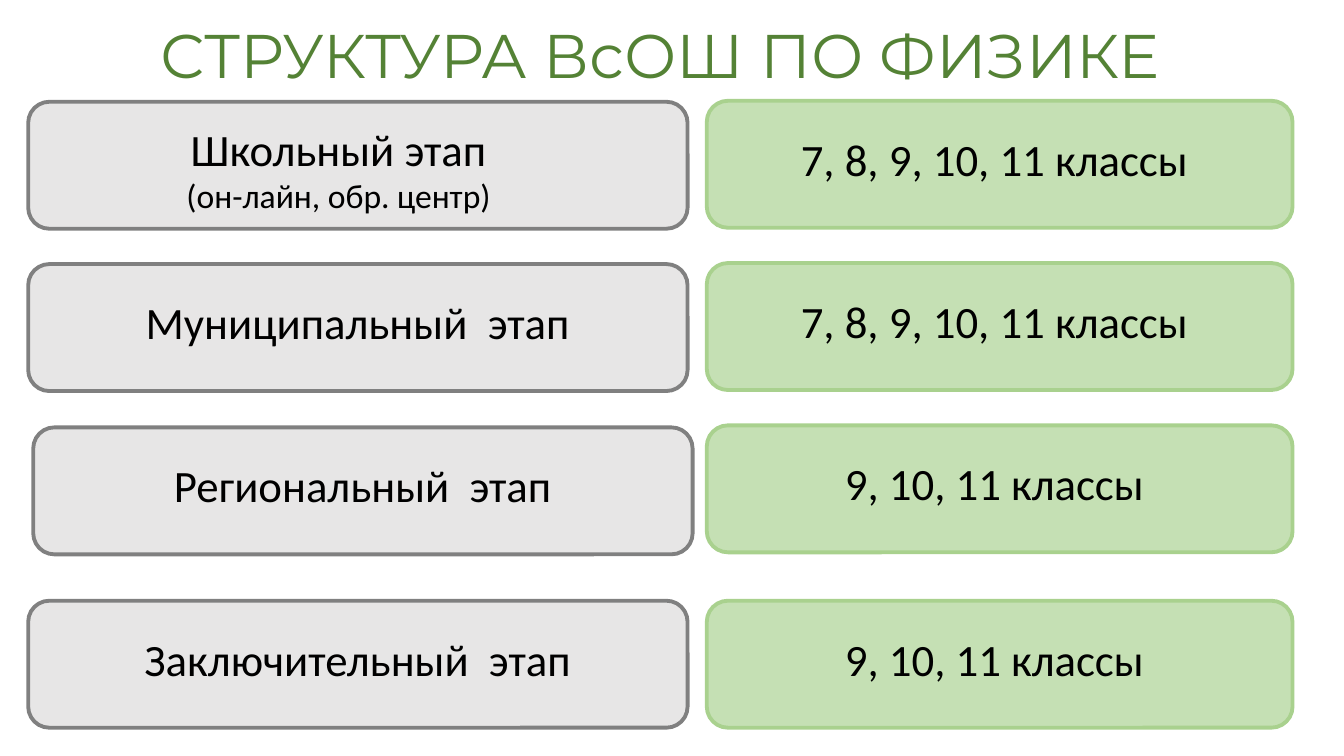
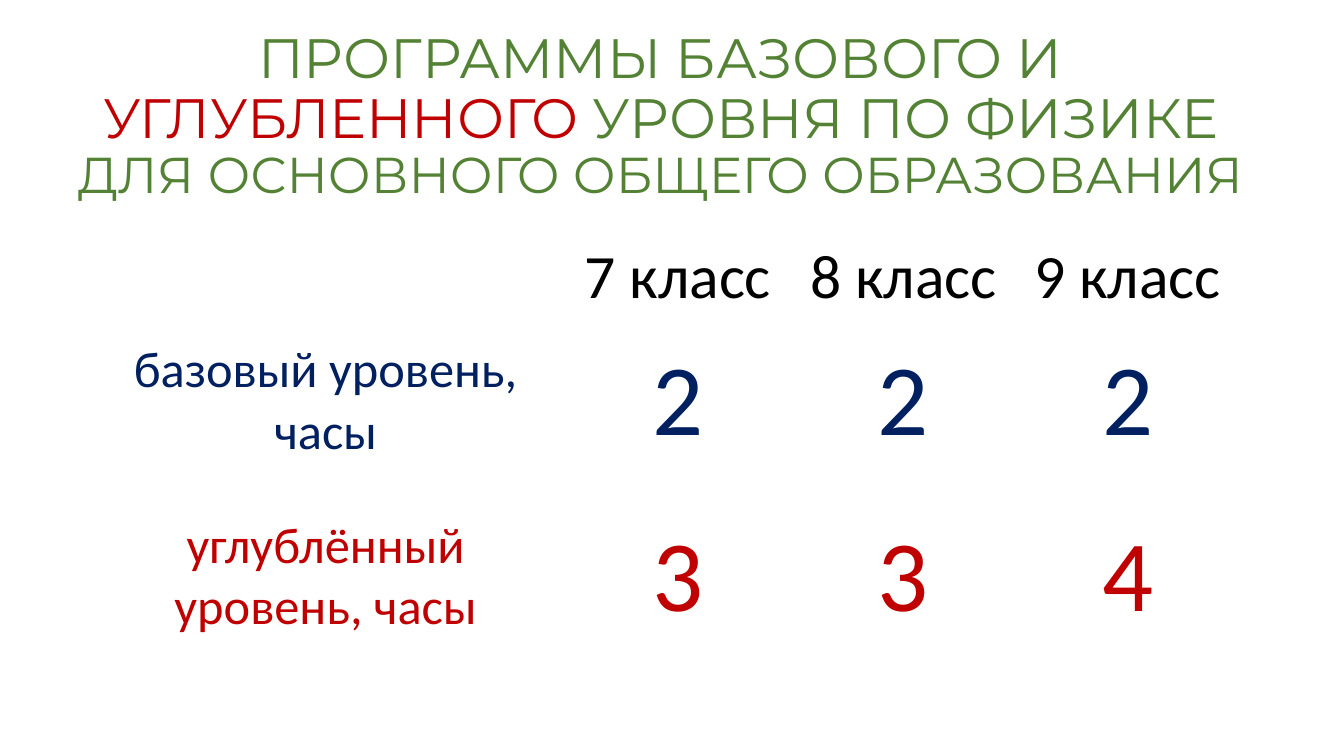
from pptx import Presentation
from pptx.dml.color import RGBColor
from pptx.enum.shapes import MSO_SHAPE
from pptx.enum.text import MSO_ANCHOR, PP_ALIGN
from pptx.util import Inches, Pt

ROUNDED = MSO_SHAPE.ROUNDED_RECTANGLE
MIDDLE = MSO_ANCHOR.MIDDLE
CENTER = PP_ALIGN.CENTER

GREEN = RGBColor(0x54, 0x82, 0x35)
RED = RGBColor(0xC0, 0x00, 0x00)
NAVY = RGBColor(0x00, 0x20, 0x60)
BLACK = RGBColor(0x00, 0x00, 0x00)
STAGE_STYLE = (RGBColor(0xE7, 0xE6, 0xE6), RGBColor(0x80, 0x80, 0x80))
GRADES_STYLE = (RGBColor(0xC5, 0xE0, 0xB4), RGBColor(0xA9, 0xD1, 0x8E))

TITLE_FONT, BODY_FONT = "Montserrat", "Calibri"

# Titles: lines of (text, size, colour) runs
STRUCTURE_TITLE = [[("СТРУКТУРА ВсОШ ПО ФИЗИКЕ", 44, GREEN)]]
PROGRAM_TITLE = [
    [("ПРОГРАММЫ БАЗОВОГО И", 39.6, GREEN)],
    [("УГЛУБЛЕННОГО", 39.6, RED), (" УРОВНЯ ПО ФИЗИКЕ", 39.6, GREEN)],
    [("ДЛЯ ОСНОВНОГО ОБЩЕГО ОБРАЗОВАНИЯ", 36, GREEN)],
]

# Stages: lines of (text, size), left, top, insets; then grades and their top
BOX_HEIGHT = 1.26
STAGE_WIDTH = 6.54
GRADES_LEFT, GRADES_WIDTH = 7.01, 5.81
STAGE_INSETS = (0.1, 0.05, 0.1, 0.17)
TWO_LINE_INSETS = (0.1, 0.11, 0.48, 0.05)
GRADES_INSETS = (0.1, 0.05, 0.2, 0.17)
STAGES = [
    ([("Школьный этап", 32), ("(он-лайн, обр. центр)", 24)],
     0.28, 1.01, TWO_LINE_INSETS, "7, 8, 9, 10, 11 классы", 1.0),
    ([("Муниципальный  этап", 32)],
     0.28, 2.62, STAGE_INSETS, "7, 8, 9, 10, 11 классы", 2.61),
    ([("Региональный  этап", 32)],
     0.33, 4.24, STAGE_INSETS, "9, 10, 11 классы", 4.22),
    ([("Заключительный  этап", 32)],
     0.28, 5.96, STAGE_INSETS, "9, 10, 11 классы", 5.96),
]

# Weekly hours: cells, size of first column, size of the rest, colour
HOURS = [
    (("", "7 класс", "8 класс", "9 класс"), 44, 44, BLACK),
    (("базовый уровень, часы", "2", "2", "2"), 36, 72, NAVY),
    (("углублённый уровень, часы", "3", "3", "4"), 36, 72, RED),
]
HOURS_COLUMNS = (4.7, 2.29, 2.18, 2.27)
HOURS_ROWS = (0.63, 1.74, 1.74)


def set_values(target, values):
    for name, value in values.items():
        setattr(target, name, value)


def write_lines(frame, lines, font_name, line_spacing=1.0):
    """Fill a text frame with centred lines, each a list of runs."""
    for index, runs in enumerate(lines):
        paragraph = frame.paragraphs[0] if index == 0 else frame.add_paragraph()
        set_values(paragraph, {"alignment": CENTER, "line_spacing": line_spacing})
        for text, size, color in runs:
            run = paragraph.add_run()
            run.text = text
            set_values(run.font, {"name": font_name, "size": Pt(size), "bold": False})
            run.font.color.rgb = color


def insets(left, top, right, bottom):
    return {"margin_left": Inches(left), "margin_top": Inches(top),
            "margin_right": Inches(right), "margin_bottom": Inches(bottom)}


def add_titled_slide(presentation, title, top):
    slide = presentation.slides.add_slide(presentation.slide_layouts[6])
    box = slide.shapes.add_textbox(Inches(0.28), Inches(top), Inches(12.54), Inches(1.17))
    set_values(box.text_frame, {"word_wrap": True, "vertical_anchor": MIDDLE})
    write_lines(box.text_frame, title, TITLE_FONT, 0.9)
    return slide


def add_box(slide, left, top, width, style, lines, margins):
    fill, outline = style
    shape = slide.shapes.add_shape(ROUNDED, Inches(left), Inches(top),
                                   Inches(width), Inches(BOX_HEIGHT))
    shape.shadow.inherit = False
    shape.fill.solid()
    shape.fill.fore_color.rgb = fill
    shape.line.color.rgb = outline
    shape.line.width = Pt(2.75)
    set_values(shape.text_frame,
               {"word_wrap": True, "vertical_anchor": MIDDLE, **insets(*margins)})
    write_lines(shape.text_frame, [[(text, size, BLACK)] for text, size in lines], BODY_FONT)


def add_hours_table(slide):
    frame = slide.shapes.add_table(
        len(HOURS), len(HOURS_COLUMNS), Inches(0.88), Inches(2.38),
        Inches(sum(HOURS_COLUMNS)), Inches(sum(HOURS_ROWS)))
    table = frame.table
    set_values(table, {"first_row": False, "horz_banding": False})
    for column, width in zip(table.columns, HOURS_COLUMNS):
        column.width = Inches(width)
    for row, height, (texts, label_size, size, color) in zip(table.rows, HOURS_ROWS, HOURS):
        row.height = Inches(height)
        for index, (cell, text) in enumerate(zip(row.cells, texts)):
            cell.fill.background()
            set_values(cell, {"vertical_anchor": MIDDLE, **insets(0, 0, 0, 0)})
            if text:
                run = (text, size if index else label_size, color)
                write_lines(cell.text_frame, [[run]], BODY_FONT)


def main():
    presentation = Presentation()
    set_values(presentation, {"slide_width": Inches(13.33), "slide_height": Inches(7.5)})

    # Structure of the olympiad
    slide = add_titled_slide(presentation, STRUCTURE_TITLE, 0)
    for lines, left, top, margins, grades, grades_top in STAGES:
        add_box(slide, left, top, STAGE_WIDTH, STAGE_STYLE, lines, margins)
        add_box(slide, GRADES_LEFT, grades_top, GRADES_WIDTH, GRADES_STYLE,
                [(grades, 32)], GRADES_INSETS)

    # Hours by programme level
    slide = add_titled_slide(presentation, PROGRAM_TITLE, 0.58)
    add_hours_table(slide)

    presentation.save("out.pptx")


if __name__ == "__main__":
    main()
